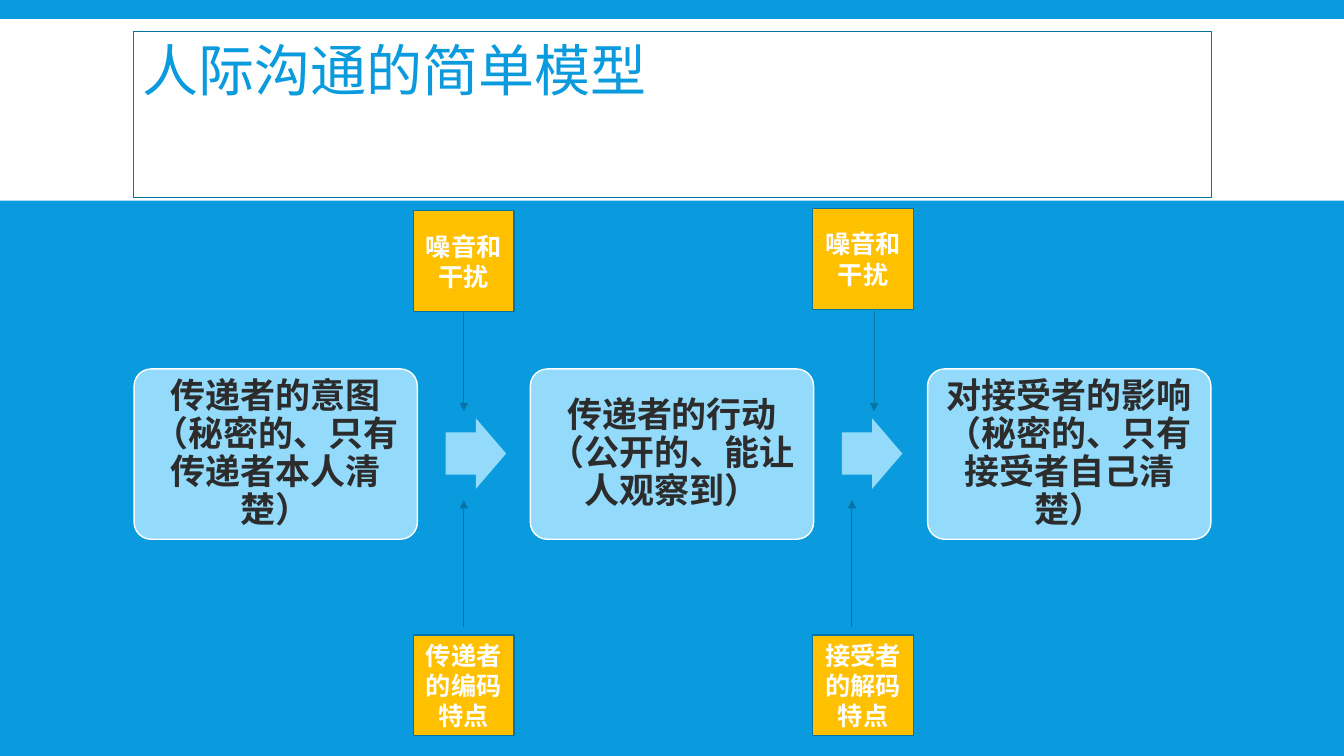
from pptx import Presentation
from pptx.dml.color import RGBColor
from pptx.enum.shapes import MSO_CONNECTOR as Connector, MSO_SHAPE as Shape
from pptx.enum.text import MSO_ANCHOR as Anchor, PP_ALIGN as Align
from pptx.oxml.ns import qn
from pptx.util import Pt
from lxml.etree import SubElement

PX = 9144
BLUE = RGBColor(0x09, 0x9B, 0xDD)
DARK_BLUE = RGBColor(0x07, 0x74, 0xA6)
LIGHT_BLUE = RGBColor(0x93, 0xDA, 0xFB)
AMBER = RGBColor(0xFF, 0xC0, 0x00)
WHITE = RGBColor(0xFF, 0xFF, 0xFF)
CHARCOAL = RGBColor(0x2C, 0x2C, 0x2C)

STAGES = [
    "传递者的意图（秘密的、只有传递者本人清楚）",
    "传递者的行动（公开的、能让人观察到）",
    "对接受者的影响（秘密的、只有接受者自己清楚）",
]


def px(*lengths):
    return [length * PX for length in lengths]


def add_block(slide, kind, box, fill=None, line=None, width=1):
    block = slide.shapes.add_shape(kind, *px(*box))
    block.shadow.inherit = False
    if fill is None:
        block.fill.background()
    else:
        block.fill.solid()
        block.fill.fore_color.rgb = fill
    if line is None:
        block.line.fill.background()
    else:
        block.line.color.rgb = line
        block.line.width = Pt(width)
    return block


def write(block, words, size, color, bold=True, align=Align.CENTER, spacing=1.0):
    frame = block.text_frame
    frame.word_wrap = True
    frame.vertical_anchor = Anchor.MIDDLE
    frame.text = words
    paragraph = frame.paragraphs[0]
    paragraph.alignment = align
    paragraph.line_spacing = spacing
    font = paragraph.runs[0].font
    font.name = "Calibri"
    font.size = Pt(size)
    font.bold = bold
    font.color.rgb = color


def add_pointer(slide, x, start, end):
    pointer = slide.shapes.add_connector(Connector.STRAIGHT, *px(x, start, x, end))
    pointer.line.color.rgb = DARK_BLUE
    pointer.line.width = Pt(0.75)
    properties = pointer._element.spPr
    SubElement(properties.find(qn("a:ln")), qn("a:tailEnd"), type="triangle")
    SubElement(properties, qn("a:effectLst"))
    return pointer


def draw_header(slide, left, top, width, height):
    add_block(slide, Shape.RECTANGLE, (left, top, width, height), WHITE)
    title_box = (left + 132, top + 12, 1070, 165)
    title = add_block(slide, Shape.RECTANGLE, title_box, line=DARK_BLUE, width=0.75)
    write(title, "人际沟通的简单模型", 40, BLUE, False, Align.LEFT, 0.85)
    title.text_frame.vertical_anchor = Anchor.TOP
    title.text_frame.margin_top = 14 * PX


def draw_process(slide, left, top, width, height):
    stage_width = 281
    for index, words in enumerate(STAGES):
        x = left + index * (width - stage_width) // (len(STAGES) - 1)
        stage_box = (x, top, stage_width, height)
        stage = add_block(slide, Shape.ROUNDED_RECTANGLE, stage_box, LIGHT_BLUE, WHITE)
        stage.adjustments[0] = 0.1
        frame = stage.text_frame
        frame.margin_top = frame.margin_bottom = 10 * PX
        write(stage, words, 25, CHARCOAL, spacing=0.9)
        if index < len(STAGES) - 1:
            arrow_box = (x + 309, top + (height - 70) // 2, 60, 70)
            arrow = add_block(slide, Shape.RIGHT_ARROW, arrow_box, LIGHT_BLUE)
            arrow.adjustments[0] = 0.6
            arrow.adjustments[1] = 0.5


def draw_influences(slide, left, top, trait, noise_x, trait_x):
    side = 100
    noise, coding = [
        add_block(slide, Shape.RECTANGLE, (left, y, side, side), AMBER, DARK_BLUE)
        for y in (top, 630)
    ]
    write(noise, "噪音和干扰", 18, WHITE)
    write(coding, trait, 18, WHITE)
    noise_pointer = add_pointer(slide, noise_x, 309, 408)
    if noise_x == left + side // 2:
        noise_pointer.begin_connect(noise, 2)
    add_pointer(slide, trait_x, 622, 496)


def main():
    deck = Presentation()
    deck.slide_width, deck.slide_height = px(1333, 750)
    slide = deck.slides.add_slide(deck.slide_layouts[6])
    slide.background.fill.solid()
    slide.background.fill.fore_color.rgb = BLUE
    draw_header(slide, 0, 19, 1333, 180)
    draw_process(slide, 133, 366, 1068, 169)
    draw_influences(slide, 410, 209, "传递者的编码特点", 460, 460)
    draw_influences(slide, 806, 207, "接受者的解码特点", 867, 845)
    deck.save("out.pptx")


if __name__ == "__main__":
    main()
